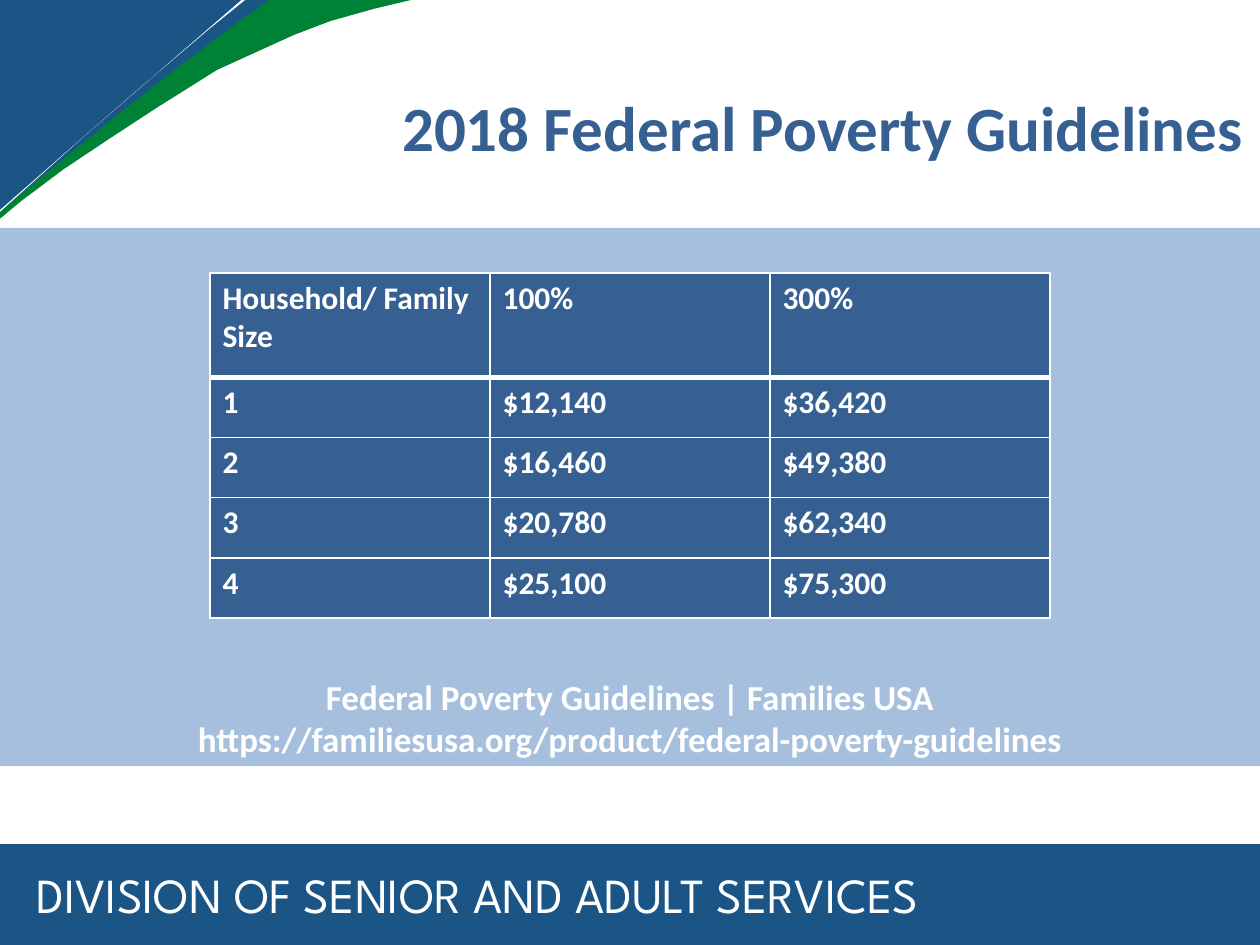
from lxml import etree
from pptx import Presentation
from pptx import util as u
from pptx.dml.color import RGBColor
from pptx.enum import shapes, text
from pptx.oxml.ns import qn

Pt = u.Pt
COLORS = {"navy": "1A5586", "green": "008236", "white": "FFFFFF",
          "panel": "4F81BD", "table": "376092"}
WIDTH, HEIGHT = 720, 540

TITLE = "2018 Federal Poverty Guidelines"
DIVISION = "DIVISION OF SENIOR AND ADULT SERVICES"
SOURCE = ["Federal Poverty Guidelines | Families USA",
          "https://familiesusa.org/product/federal-poverty-guidelines"]
GUIDELINES = [
    ("Household/ Family Size", "100%", "300%"),
    ("1", "$12,140", "$36,420"),
    ("2", "$16,460", "$49,380"),
    ("3", "$20,780", "$62,340"),
    ("4", "$25,100", "$75,300"),
]
CORNER = [
    ("navy", [(0, 0), (201, 0), (181.4, 6.5), (137.5, 28.8), (80, 63.4),
              (24.5, 103), (0, 122.4)]),
    ("green", [(154, 0), (234.7, 0), (213.8, 5), (189.4, 12.2), (167.8, 20.2),
               (146.2, 29.5), (123.8, 40.3), (89.3, 61.9), (62.6, 79.2),
               (36, 97.2), (11.5, 115.2), (0, 124.6), (0, 121), (30.2, 95.8),
               (67.7, 64.8), (100, 39.6), (128.9, 18)]),
    ("white", [(137.5, 0), (139.7, 0), (118.8, 16.6), (79.2, 51.1),
               (48.2, 77.8), (0, 121), (0, 120.2), (47.5, 77.8)]),
]


def rgb(name):
    return RGBColor.from_string(COLORS[name])


def paint(shape, color):
    shape.shadow.inherit = False
    shape.fill.solid()
    shape.fill.fore_color.rgb = rgb(color)
    shape.line.fill.background()


def write(frame, lines, size, font="Calibri", color="white", bold=True,
          align=text.PP_ALIGN.CENTER, anchor=text.MSO_ANCHOR.TOP, wrap=True):
    frame.word_wrap = wrap
    frame.vertical_anchor = anchor
    for index, line in enumerate(lines):
        paragraph = frame.paragraphs[0] if index == 0 else frame.add_paragraph()
        paragraph.alignment = align
        run = paragraph.add_run()
        run.text = line
        run.font.size, run.font.name, run.font.bold = Pt(size), font, bold
        run.font.color.rgb = rgb(color)


def add_border(cell, side, width):
    border = etree.SubElement(cell._tc.get_or_add_tcPr(), qn(f"a:ln{side}"),
                              w=str(Pt(width)))
    fill = etree.SubElement(border, qn("a:solidFill"))
    etree.SubElement(fill, qn("a:srgbClr"), val=COLORS["white"])


deck = Presentation()
deck.slide_width, deck.slide_height = Pt(WIDTH), Pt(HEIGHT)
slide = deck.slides.add_slide(deck.slide_layouts[6])


def add_band(top, height, color):
    band = slide.shapes.add_shape(shapes.MSO_SHAPE.RECTANGLE,
                                  0, Pt(top), Pt(WIDTH), Pt(height))
    paint(band, color)
    return band


add_band(482.4, HEIGHT - 482.4, "navy")
for color, points in CORNER:
    outline = slide.shapes.build_freeform(*points[0], scale=Pt(1))
    outline.add_line_segments(points[1:], close=True)
    paint(outline.convert_to_shape(), color)

panel = add_band(130.3, 307.5, "panel")
panel_color = panel.fill._xPr.find(f"{qn('a:solidFill')}/{qn('a:srgbClr')}")
etree.SubElement(panel_color, qn("a:alpha"), val="50000")
write(panel.text_frame, SOURCE, 20, anchor=text.MSO_ANCHOR.BOTTOM)

division = slide.shapes.add_textbox(Pt(21), Pt(494), Pt(636.5), Pt(34)).text_frame
division.margin_left = division.margin_right = 0
division.margin_top = division.margin_bottom = 0
write(division, [DIVISION], 28, font="League Spartan", bold=False,
      align=text.PP_ALIGN.LEFT)

title = slide.shapes.add_textbox(Pt(220.3), Pt(46.8), Pt(499.7), Pt(51))
write(title.text_frame, [TITLE], 36, color="table", wrap=False)

HEADER_HEIGHT, ROW_HEIGHT, COLUMN_WIDTH = 59.6, 34.4, 160
row_count, column_count = len(GUIDELINES), len(GUIDELINES[0])
table_width = COLUMN_WIDTH * column_count
table_height = HEADER_HEIGHT + ROW_HEIGHT * (row_count - 1)
table = slide.shapes.add_table(
    row_count, column_count, Pt((WIDTH - table_width) / 2), Pt(156),
    Pt(table_width), Pt(table_height)).table
for column in table.columns:
    column.width = Pt(COLUMN_WIDTH)
for r, values in enumerate(GUIDELINES):
    table.rows[r].height = Pt(ROW_HEIGHT if r else HEADER_HEIGHT)
    for c, value in enumerate(values):
        cell = table.cell(r, c)
        write(cell.text_frame, [value], 18, align=text.PP_ALIGN.LEFT)
        for side in "LRTB":
            under_header = (r, side) in ((0, "B"), (1, "T"))
            add_border(cell, side, 3 if under_header else 1)
        cell.fill.solid()
        cell.fill.fore_color.rgb = rgb("table")

deck.save("out.pptx")
